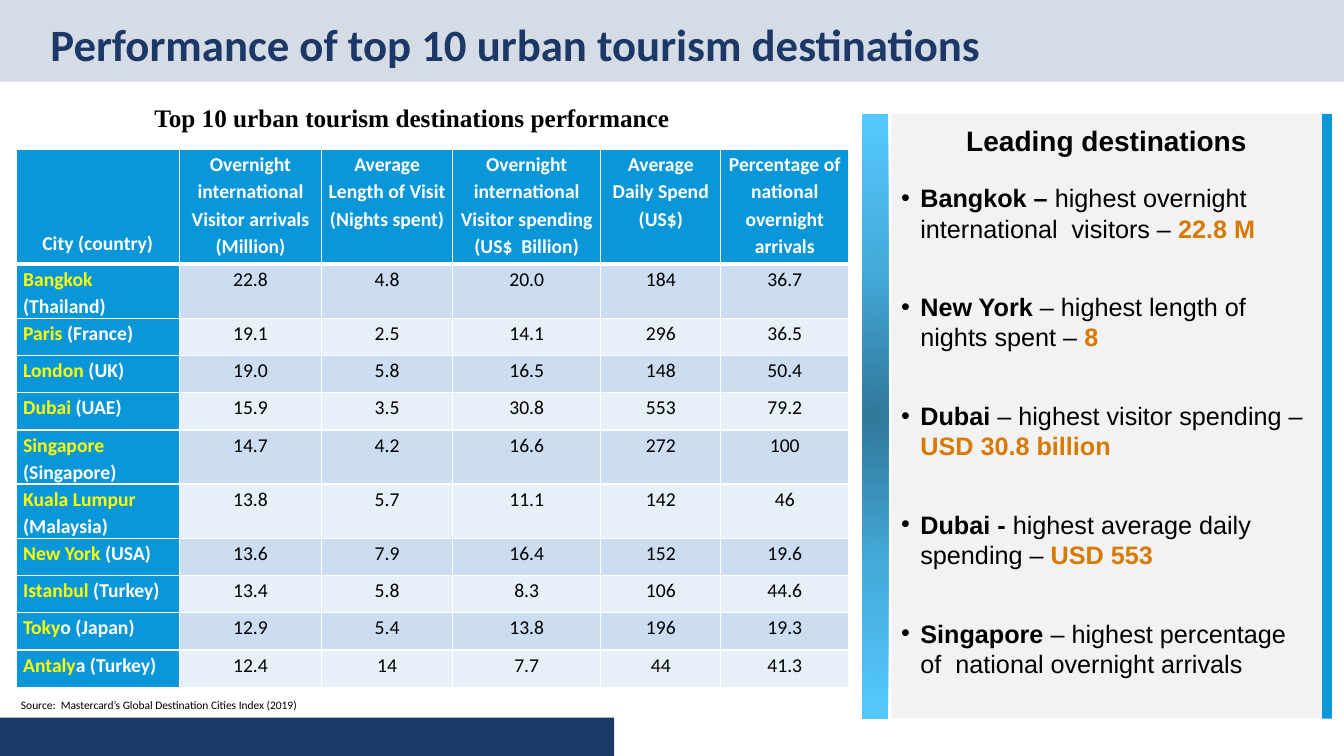
from lxml.etree import SubElement
from pptx import Presentation
from pptx.dml.color import RGBColor
from pptx.enum.shapes import MSO_SHAPE
from pptx.enum.text import MSO_ANCHOR, PP_ALIGN
from pptx.oxml import parse_xml
from pptx.oxml.ns import nsdecls, qn
from pptx.util import Inches, Pt

COLORS = {
    "navy": "1C3867", "banner": "D6DCE5", "blue": "0A97D9", "panel": "F2F2F2",
    "orange": "D77902", "yellow": "FFFF00", "white": "FFFFFF", "black": "000000",
    "odd_row": "CCDDF1", "even_row": "E7EFF8",
    "glow_core": "30789A", "glow_middle": "44ABDA", "glow_edge": "55C9FF",
}


def add_span(para, text, size, font, color="black", bold=True):
    span = para.add_run()
    span.text = text
    span.font.size = Pt(size)
    span.font.name = font
    span.font.bold = bold
    span.font.color.rgb = RGBColor.from_string(COLORS[color])


def add_block(page, left, top, width, height, color):
    block = page.shapes.add_shape(
        MSO_SHAPE.RECTANGLE, Inches(left), Inches(top), Inches(width), Inches(height))
    block.shadow.inherit = False
    block.line.fill.background()
    block.fill.solid()
    block.fill.fore_color.rgb = RGBColor.from_string(COLORS[color])
    return block


deck = Presentation()
deck.slide_width, deck.slide_height = Inches(13.33), Inches(7.5)
page = deck.slides.add_slide(deck.slide_layouts[5])

banner = add_block(page, 0, 0, 13.33, 0.81, "banner")
footer = add_block(page, 0, 7.12, 6.09, 0.38, "navy")

title = page.shapes.title
title.left, title.top, title.width, title.height = (
    Inches(0.4), Inches(0.15), Inches(12.52), Inches(0.64))
title.text_frame.vertical_anchor = MSO_ANCHOR.MIDDLE
heading = title.text_frame.paragraphs[0]
heading.alignment = PP_ALIGN.LEFT
heading.line_spacing = 0.9
add_span(heading, "Performance of top 10 urban tourism destinations", 32, "Calibri", "navy")
banner._element.addnext(title._element)

captions = [
    ("Source:  Mastercard’s Global Destination Cities Index (2019)",
     (0.11, 6.88, 5.49, 0.24), 8.2, "Calibri", False, PP_ALIGN.LEFT),
    ("Top 10 urban tourism destinations performance",
     (0.46, 0.97, 7.25, 0.4), 18, "Times New Roman", True, PP_ALIGN.CENTER),
]
for text, place, size, font, bold, alignment in captions:
    box = page.shapes.add_textbox(*[Inches(length) for length in place])
    box.text_frame.word_wrap = True
    para = box.text_frame.paragraphs[0]
    para.alignment = alignment
    add_span(para, text, size, font, bold=bold)

panel_top, panel_height = 1.13, 6
glow = add_block(page, 8.55, panel_top, 0.26, panel_height, "glow_middle")
edge = add_block(page, 13.11, panel_top, 0.1, panel_height, "blue")
panel = add_block(page, 8.84, panel_top, 4.27, panel_height, "panel")

gradient = parse_xml(
    f'<a:gradFill {nsdecls("a")} rotWithShape="1"><a:gsLst/><a:path path="circle">'
    '<a:fillToRect l="50000" t="50000" r="50000" b="50000"/></a:path></a:gradFill>')
for position, name in [(0, "glow_core"), (50000, "glow_middle"), (100000, "glow_edge")]:
    stop = SubElement(gradient[0], qn("a:gs"), pos=str(position))
    SubElement(stop, qn("a:srgbClr"), val=COLORS[name])
glow_properties = glow._element.spPr
glow_properties.replace(glow_properties.find(qn("a:solidFill")), gradient)

leaders = [
    ("Bangkok – ", "highest overnight international  visitors – ", "22.8 M"),
    ("New York ", "– highest length of nights spent – ", "8"),
    ("Dubai ", "– highest visitor spending – ", "USD 30.8 billion"),
    ("Dubai - ", "highest average daily spending – ", "USD 553"),
    ("Singapore ", "– highest percentage of  national overnight arrivals", ""),
]
frame = panel.text_frame
frame.word_wrap = True
frame.vertical_anchor = MSO_ANCHOR.TOP
frame.margin_left = frame.margin_right = Inches(0.1)
frame.margin_top = frame.margin_bottom = Inches(0.1)
para = frame.paragraphs[0]
para.alignment = PP_ALIGN.CENTER
para.space_after = Pt(18)
add_span(para, "Leading destinations", 20, "Arial")
for city, claim, figure in leaders:
    para = frame.add_paragraph()
    para.alignment = PP_ALIGN.LEFT
    para.space_after = Pt(34.5)
    properties = para._p.get_or_add_pPr()
    properties.set("marL", str(Inches(0.19)))
    properties.set("indent", str(-Inches(0.19)))
    SubElement(properties, qn("a:buFont"), typeface="Arial")
    SubElement(properties, qn("a:buChar"), char="•")
    add_span(para, city, 18, "Arial")
    add_span(para, claim, 18, "Arial", bold=False)
    if figure:
        add_span(para, figure, 18, "Arial", "orange")

headers = [
    "City (country)",
    "Overnight international Visitor arrivals (Million)",
    "Average Length of Visit (Nights spent)",
    "Overnight international Visitor spending (US$  Billion)",
    "Average Daily Spend (US$)",
    "Percentage of national overnight arrivals",
]
cities = [
    ("Bangkok| (Thailand)", "22.8", "4.8", "20.0", "184", "36.7"),
    ("Paris| (France)", "19.1", "2.5", "14.1", "296", "36.5"),
    ("London| (UK)", "19.0", "5.8", "16.5", "148", "50.4"),
    ("Dubai| (UAE)", "15.9", "3.5", "30.8", "553", "79.2"),
    ("Singapore| (Singapore)", "14.7", "4.2", "16.6", "272", "100"),
    ("Kuala Lumpur| (Malaysia)", "13.8", "5.7", "11.1", "142", "46"),
    ("New York| (USA)", "13.6", "7.9", "16.4", "152", "19.6"),
    ("Istanbul| (Turkey)", "13.4", "5.8", "8.3", "106", "44.6"),
    ("Toky|o (Japan)", "12.9", "5.4", "13.8", "196", "19.3"),
    ("Antaly|a (Turkey)", "12.4", "14", "7.7", "44", "41.3"),
]
column_widths = [1.62, 1.41, 1.3, 1.47, 1.19, 1.27]
header_height, row_height = 1.14, 0.37
table = page.shapes.add_table(
    len(cities) + 1, len(headers), Inches(0.16), Inches(1.48), Inches(sum(column_widths)),
    Inches(header_height + row_height * len(cities))).table
for column, width in zip(table.columns, column_widths):
    column.width = Inches(width)
for row_number, values in enumerate([headers, *cities]):
    table.rows[row_number].height = Inches(row_height if row_number else header_height)
    for column_number, value in enumerate(values):
        cell = table.cell(row_number, column_number)
        cell.margin_left = cell.margin_right = Inches(0.07)
        cell.margin_top = cell.margin_bottom = 0
        para = cell.text_frame.paragraphs[0]
        para.line_spacing = 1.15
        para.space_after = Pt(8)
        para.alignment = PP_ALIGN.CENTER
        fill = "blue"
        if row_number == 0:
            add_span(para, value, 14, "Calibri", "white")
        elif column_number == 0:
            para.alignment = PP_ALIGN.LEFT
            city, country = value.split("|")
            add_span(para, city, 14, "Calibri", "yellow")
            add_span(para, country, 14, "Calibri", "white")
        else:
            fill = "odd_row" if row_number % 2 else "even_row"
            add_span(para, value, 14, "Calibri", bold=False)
        cell.fill.solid()
        cell.fill.fore_color.rgb = RGBColor.from_string(COLORS[fill])
        for index, side in enumerate(["lnL", "lnR", "lnT", "lnB"]):
            thick = (row_number, side) in [(0, "lnB"), (1, "lnT")]
            border = parse_xml(
                f'<a:{side} {nsdecls("a")} w="{Pt(3 if thick else 1)}"><a:solidFill>'
                f'<a:srgbClr val="{COLORS["white"]}"/></a:solidFill></a:{side}>')
            cell._tc.get_or_add_tcPr().insert(index, border)
city_header = table.cell(0, 0)
city_header.vertical_anchor = MSO_ANCHOR.BOTTOM
city_header.margin_bottom = Inches(0.08)

deck.save("out.pptx")
